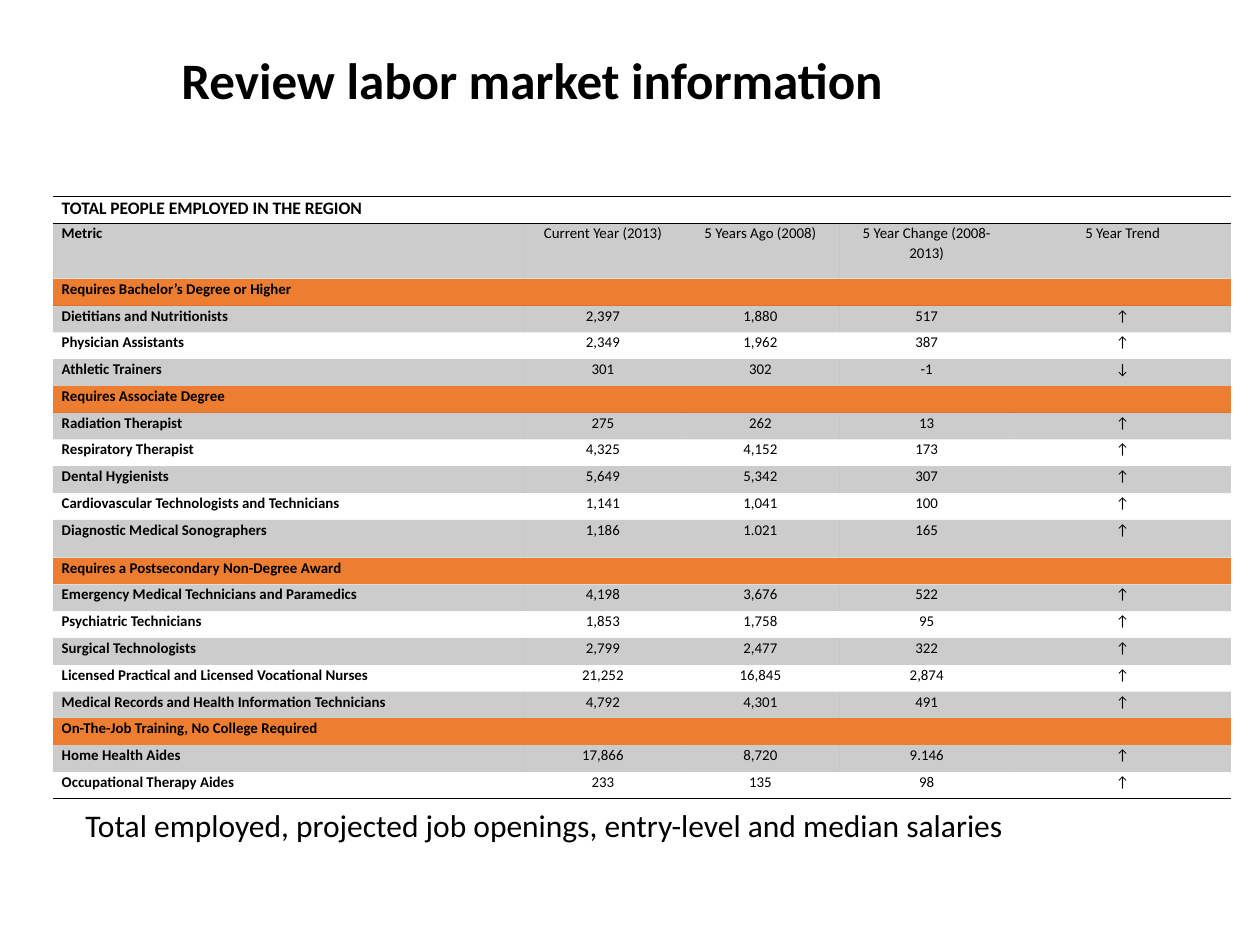
from dataclasses import dataclass

from lxml import etree
from pptx import Presentation
from pptx.dml.color import RGBColor
from pptx.enum.text import MSO_ANCHOR, MSO_AUTO_SIZE, PP_ALIGN
from pptx.oxml.ns import qn
from pptx.util import Inches, Pt

LEFT, CENTER = PP_ALIGN.LEFT, PP_ALIGN.CENTER
MIDDLE, TOP = MSO_ANCHOR.MIDDLE, MSO_ANCHOR.TOP
NO_AUTOFIT = MSO_AUTO_SIZE.NONE
NO_GRID_STYLE = "{2D5ABB26-0587-4C30-8999-92F81FD0307C}"


@dataclass(frozen=True)
class Theme:
    font: str = "Calibri"
    ink: RGBColor = RGBColor(0x00, 0x00, 0x00)
    section: RGBColor = RGBColor(0xED, 0x7D, 0x31)
    band_opacity: int = 20
    rule_width: int = Pt(1)
    title_size: int = Pt(29.2)
    caption_size: int = Pt(18)
    table_title_size: int = Pt(10)
    cell_size: int = Pt(8.5)


theme = Theme()


def format_text(text_frame, size, bold=False, alignment=LEFT, line_spacing=1.0):
    for paragraph in text_frame.paragraphs:
        paragraph.alignment = alignment
        paragraph.line_spacing = line_spacing
        for run in paragraph.runs:
            run.font.name = theme.font
            run.font.size = size
            run.font.bold = bold
            run.font.color.rgb = theme.ink


def add_rules(cell, sides):
    """Rule the given sides (T, B); the lines must precede the cell's fill."""
    properties = cell._tc.get_or_add_tcPr()
    for position, side in enumerate(sides):
        line = etree.Element(qn(f"a:ln{side}"), w=str(theme.rule_width))
        fill = etree.SubElement(line, qn("a:solidFill"))
        etree.SubElement(fill, qn("a:srgbClr"), val=str(theme.ink))
        properties.insert(position, line)


# Rows with a single entry span the whole table
rows = [
    ["TOTAL PEOPLE EMPLOYED IN THE REGION"],
    ["Metric", "Current Year (2013)", "5 Years Ago (2008)", "5 Year Change (2008-2013)", "5 Year Trend"],
    ["Requires Bachelor’s Degree or Higher"],
    ["Dietitians and Nutritionists", "2,397", "1,880", "517", "↑"],
    ["Physician Assistants", "2,349", "1,962", "387", "↑"],
    ["Athletic Trainers", "301", "302", "-1", "↓"],
    ["Requires Associate Degree"],
    ["Radiation Therapist", "275", "262", "13", "↑"],
    ["Respiratory Therapist", "4,325", "4,152", "173", "↑"],
    ["Dental Hygienists", "5,649", "5,342", "307", "↑"],
    ["Cardiovascular Technologists and Technicians", "1,141", "1,041", "100", "↑"],
    ["Diagnostic Medical Sonographers", "1,186", "1.021", "165", "↑"],
    ["Requires a Postsecondary Non-Degree Award"],
    ["Emergency Medical Technicians and Paramedics", "4,198", "3,676", "522", "↑"],
    ["Psychiatric Technicians", "1,853", "1,758", "95", "↑"],
    ["Surgical Technologists", "2,799", "2,477", "322", "↑"],
    ["Licensed Practical and Licensed Vocational Nurses", "21,252", "16,845", "2,874", "↑"],
    ["Medical Records and Health Information Technicians", "4,792", "4,301", "491", "↑"],
    ["On-The-Job Training, No College Required"],
    ["Home Health Aides", "17,866", "8,720", "9.146", "↑"],
    ["Occupational Therapy Aides", "233", "135", "98", "↑"],
]
column_widths = [3.74, 1.25, 1.25, 1.39, 1.72]
table_height = 4.78
tall_rows = {1: 0.44, 11: 0.3}
row_height = (table_height - sum(tall_rows.values())) / (len(rows) - len(tall_rows))
ruled_sides = {0: "TB", len(rows) - 1: "B"}

presentation = Presentation()
presentation.slide_width = Inches(10)
presentation.slide_height = Inches(7.5)
slide = presentation.slides.add_slide(presentation.slide_layouts[5])

# Title
title = slide.shapes.title
title.left, title.top = Inches(1.34), Inches(0.31)
title.width, title.height = Inches(8.58), Inches(0.69)
title.text_frame.text = "Review labor market information"
title.text_frame.auto_size = NO_AUTOFIT
title.text_frame.vertical_anchor = MIDDLE
format_text(title.text_frame, theme.title_size, bold=True, line_spacing=0.9)

# Employment table
table_shape = slide.shapes.add_table(
    len(rows), len(column_widths), Inches(0.42), Inches(1.56), Inches(9.33), Inches(table_height)
)
table = table_shape.table
table.first_row = table.horz_banding = False
table._tbl.tblPr.find(qn("a:tableStyleId")).text = NO_GRID_STYLE
for column, width in zip(table.columns, column_widths):
    column.width = Inches(width)

for row_index, texts in enumerate(rows):
    table.rows[row_index].height = Inches(tall_rows.get(row_index, row_height))
    spans_table = len(texts) == 1
    if spans_table:
        table.cell(row_index, 0).merge(table.cell(row_index, len(column_widths) - 1))

    for column_index, cell in enumerate(table.rows[row_index].cells):
        cell.margin_left = cell.margin_right = Inches(0.07)
        cell.margin_top = cell.margin_bottom = 0
        cell.vertical_anchor = TOP

        # Section rows are orange, odd rows a translucent black band
        if spans_table and row_index > 0:
            cell.fill.solid()
            cell.fill.fore_color.rgb = theme.section
        elif row_index % 2:
            cell.fill.solid()
            cell.fill.fore_color.rgb = theme.ink
            color = cell._tc.tcPr.find(".//" + qn("a:srgbClr"))
            etree.SubElement(color, qn("a:alpha"), val=str(theme.band_opacity * 1000))
        else:
            cell.fill.background()
        add_rules(cell, ruled_sides.get(row_index, ""))

        if column_index < len(texts):
            is_label = column_index == 0
            cell.text_frame.text = texts[column_index]
            format_text(
                cell.text_frame,
                theme.cell_size if row_index else theme.table_title_size,
                bold=is_label,
                alignment=LEFT if is_label else CENTER,
                line_spacing=1.07,
            )

# Caption
caption = slide.shapes.add_textbox(Inches(0.58), Inches(6.35), Inches(8.83), Inches(0.4))
caption.text_frame.word_wrap = True
caption.text_frame.text = "Total employed, projected job openings, entry-level and median salaries"
format_text(caption.text_frame, theme.caption_size)

presentation.save("out.pptx")
